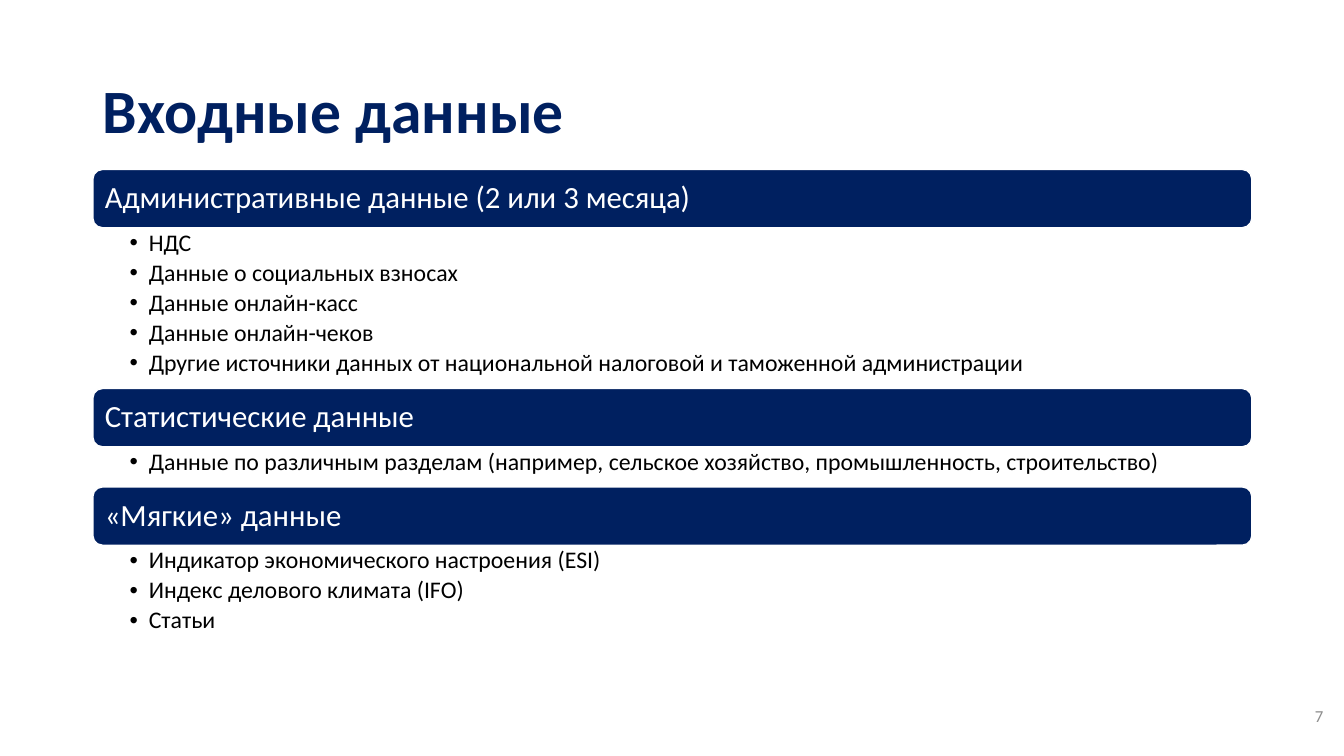
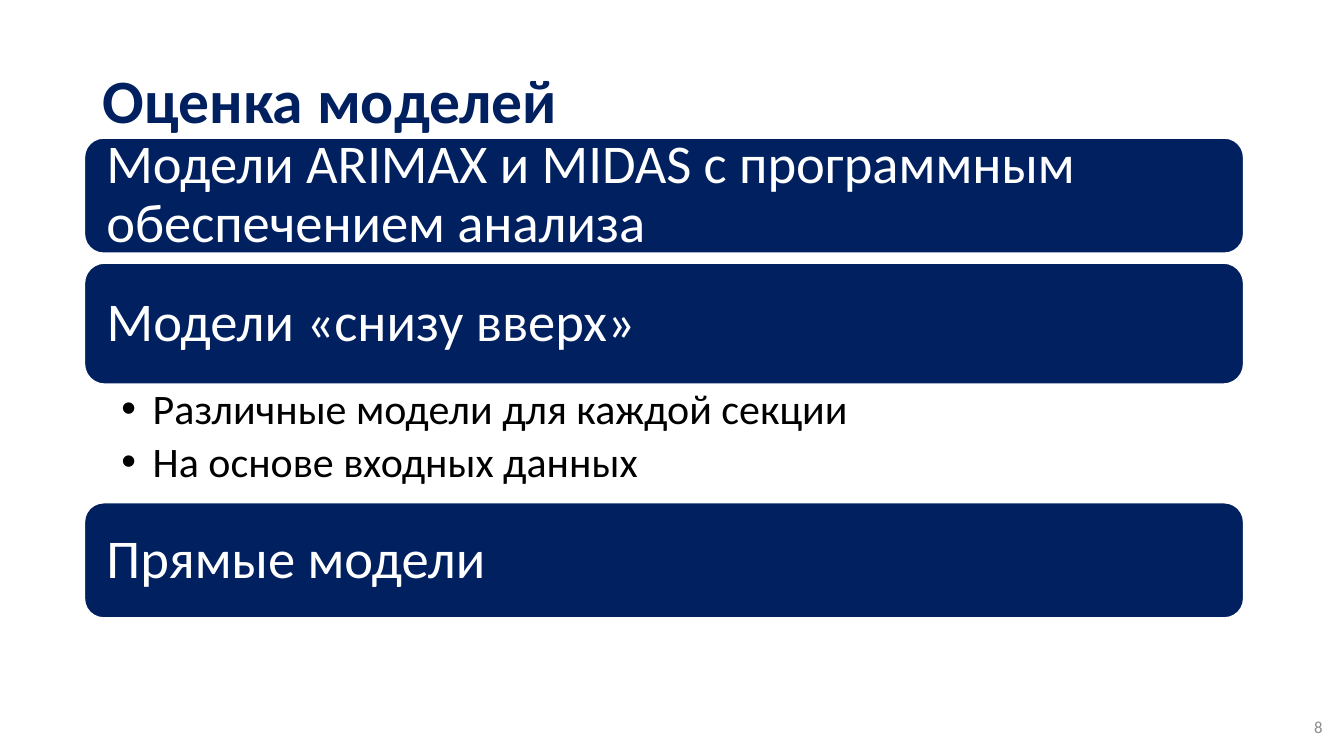
from lxml import etree
from pptx import Presentation
from pptx.dml.color import RGBColor
from pptx.enum.shapes import MSO_SHAPE
from pptx.enum.text import MSO_ANCHOR, PP_ALIGN
from pptx.oxml.ns import qn
from pptx.util import Cm, Pt

ROUNDED = MSO_SHAPE.ROUNDED_RECTANGLE
TOP, MIDDLE = MSO_ANCHOR.TOP, MSO_ANCHOR.MIDDLE
LEFT, RIGHT = PP_ALIGN.LEFT, PP_ALIGN.RIGHT
BLANK_LAYOUT = 6
FONT = "Calibri"
NAVY, WHITE, BLACK, GREY = "002060", "FFFFFF", "000000", "8C8C8C"
CONTENT_WIDTH = 29.21
LINE_SPACING = 0.9
BULLET_GAP = 0.18

SLIDES = [
    {
        "title": "Входные данные",
        "title_box": (2.34, 1.02, CONTENT_WIDTH, 3.68),
        "number": "7",
        "number_box": (25.98, 17.53, 7.62, 1.02),
        "origin": (2.34, 4.27),
        "gap": 0,
        "style": {"heading_size": 22, "heading_inset": 0.23, "item_size": 17,
                  "item_indent": 0.48, "list_insets": (0.93, 0.08, 0.42, 0.08)},
        "sections": [
            ("Административные данные (2 или 3 месяца)", 1.47, 4.05, [
                "НДС",
                "Данные о социальных взносах",
                "Данные онлайн-касс",
                "Данные онлайн-чеков",
                "Другие источники данных от национальной налоговой и таможенной администрации",
            ]),
            ("Статистические данные", 1.47, 1.01, [
                "Данные по различным разделам (например, сельское хозяйство, "
                "промышленность, строительство)",
            ]),
            ("«Мягкие» данные", 1.47, 2.46, [
                "Индикатор экономического настроения (ESI)",
                "Индекс делового климата (IFO)",
                "Статьи",
            ]),
        ],
    },
    {
        "title": "Оценка моделей",
        "title_box": (2.34, 1.02, CONTENT_WIDTH, 3.18),
        "number": "8",
        "number_box": (25.96, 17.81, 7.62, 1.02),
        "origin": (2.13, 3.48),
        "gap": 0.25,
        "style": {"heading_size": 39, "heading_inset": 0.41, "item_size": 30,
                  "item_indent": 0.79, "list_insets": (0.93, 0.1, 0.58, 0.1)},
        "sections": [
            ("Модели ARIMAX и MIDAS с программным обеспечением анализа", 2.9, 0, []),
            ("Модели «снизу вверх»", 3.05, 2.74, [
                "Различные модели для каждой секции",
                "На основе входных данных",
            ]),
            ("Прямые модели", 2.9, 0, []),
        ],
    },
]


def color(hex_value):
    """Return the colour for a hex string."""
    return RGBColor.from_string(hex_value)


def apply_format(target, values):
    """Set each attribute of the target from a dict of values."""
    for name, value in values.items():
        setattr(target, name, value)


def prepare_frame(frame, anchor, insets):
    """Set wrapping, anchor and insets (left, top, right, bottom)."""
    left, top, right, bottom = map(Cm, insets)
    apply_format(frame, {"word_wrap": True, "vertical_anchor": anchor,
                         "margin_left": left, "margin_top": top,
                         "margin_right": right, "margin_bottom": bottom})


def write(paragraph, text, size, hex_value, bold=False, align=LEFT, spacing=LINE_SPACING):
    """Fill a paragraph with one formatted run."""
    apply_format(paragraph, {"alignment": align, "line_spacing": spacing})
    run = paragraph.add_run()
    run.text = text
    apply_format(run.font, {"name": FONT, "size": Pt(size), "bold": bold})
    run.font.color.rgb = color(hex_value)


def add_bullet(paragraph, indent):
    """Give a paragraph a hanging round bullet."""
    properties = paragraph._p.get_or_add_pPr()
    properties.set("marL", str(Cm(indent)))
    properties.set("indent", str(-Cm(indent)))
    bullet_font = etree.SubElement(properties, qn("a:buFont"))
    bullet_font.set("typeface", "Arial")
    etree.SubElement(properties, qn("a:buChar")).set("char", "•")


def add_label(slide, box, text, size, hex_value, **text_format):
    """Place one line of text, vertically centred in its box."""
    frame = slide.shapes.add_textbox(*map(Cm, box)).text_frame
    prepare_frame(frame, MIDDLE, (0.25, 0.13, 0.25, 0.13))
    write(frame.paragraphs[0], text, size, hex_value, **text_format)


def add_heading_bar(slide, box, heading, style):
    """Place a rounded section bar with its heading."""
    bar = slide.shapes.add_shape(ROUNDED, *map(Cm, box))
    bar.shadow.inherit = False
    bar.fill.solid()
    bar.fill.fore_color.rgb = color(NAVY)
    bar.line.color.rgb = color(WHITE)
    bar.line.width = Pt(1)
    inset = style["heading_inset"]
    prepare_frame(bar.text_frame, MIDDLE, (inset, 0, inset, 0))
    write(bar.text_frame.paragraphs[0], heading, style["heading_size"], WHITE)


def add_item_list(slide, box, items, style):
    """Place the bulleted items of a section."""
    frame = slide.shapes.add_textbox(*map(Cm, box)).text_frame
    prepare_frame(frame, TOP, style["list_insets"])
    size = style["item_size"]
    for index, item in enumerate(items):
        paragraph = frame.add_paragraph() if index else frame.paragraphs[0]
        add_bullet(paragraph, style["item_indent"])
        write(paragraph, item, size, BLACK)
        paragraph.space_after = Pt(size * BULLET_GAP)


def add_sections(slide, origin, sections, gap, style):
    """Stack section bars and their lists downward from the origin."""
    left, top = origin
    for heading, bar_height, list_height, items in sections:
        add_heading_bar(slide, (left, top, CONTENT_WIDTH, bar_height), heading, style)
        top += bar_height
        if items:
            add_item_list(slide, (left, top, CONTENT_WIDTH, list_height), items, style)
        top += list_height + gap


def add_section_slide(presentation, content):
    """Build a slide with a title, stacked sections and a page number."""
    slide = presentation.slides.add_slide(presentation.slide_layouts[BLANK_LAYOUT])
    add_label(slide, content["title_box"], content["title"], 44, NAVY, bold=True)
    add_sections(slide, content["origin"], content["sections"],
                 content["gap"], content["style"])
    add_label(slide, content["number_box"], content["number"], 12, GREY,
              align=RIGHT, spacing=1.0)


def main():
    """Build and save the presentation."""
    presentation = Presentation()
    apply_format(presentation, {"slide_width": Cm(33.87), "slide_height": Cm(19.05)})
    for content in SLIDES:
        add_section_slide(presentation, content)
    presentation.save("out.pptx")


if __name__ == "__main__":
    main()
